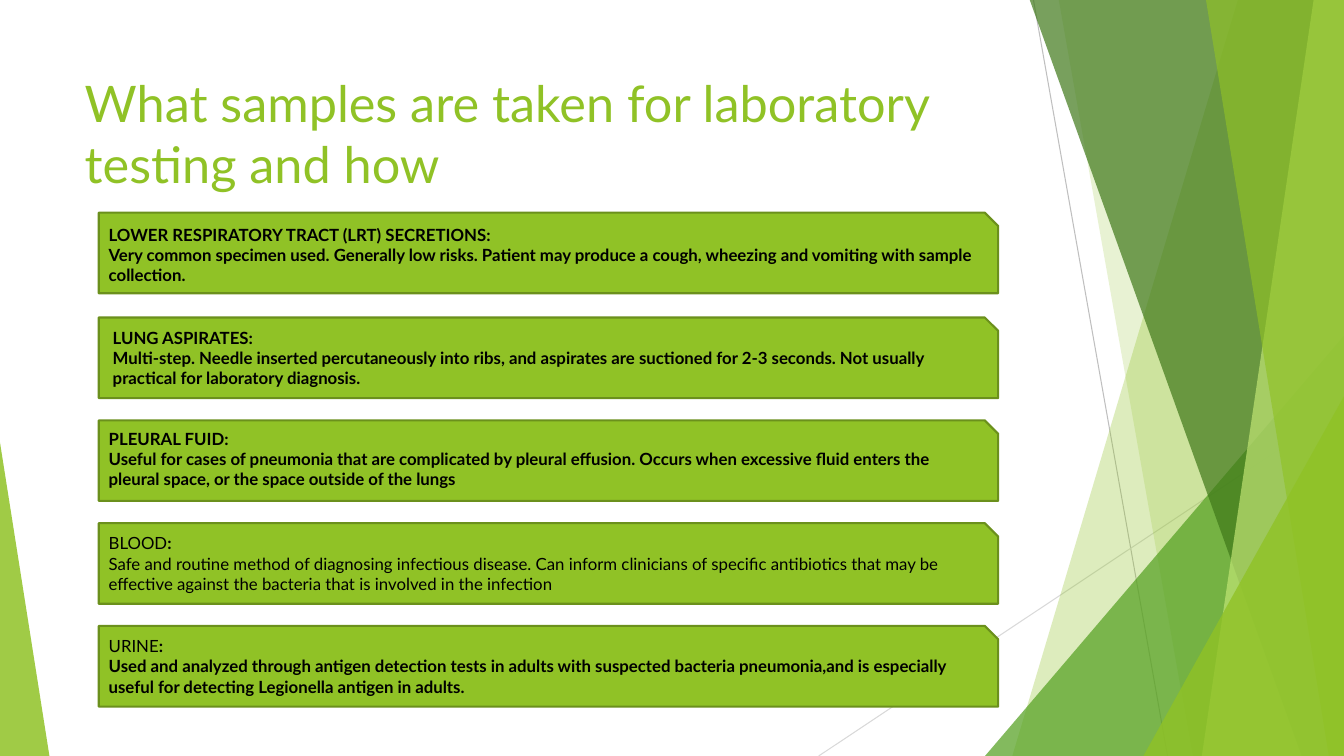
"""Build a slide listing the samples taken for laboratory testing."""
from lxml import etree
from pptx import Presentation
from pptx import util as u
from pptx.dml.color import RGBColor
from pptx.enum import shapes, text
from pptx.oxml.ns import qn

PX = 9144
WIDTH, HEIGHT = 1333, 750
FONT = "Lato"
COLORS = {
    "lime": "90C226", "pale": "C0E474", "green": "54A021", "forest": "3F7819",
    "edge": "6B901C", "black": "000000", "silver": "BFBFBF", "mist": "D9D9D9",
}
RAYS = [
    ((1025, 0), (1158, 750), "silver"),
    ((1333, 403), (812, 750), "mist"),
]
BACK_BANDS = [(1228, 1004, "lime", 30), (1050, 1183, "lime", 20)]
FRONT_BANDS = [
    (1021, 1291, "forest", 70),
    (1303, 1192, "pale", 70),
    (1196, 1318, "lime", 65),
]
GREEN_CORNER = ((977, 333, 356, 417), 1, "green", 72)
LIME_CORNERS = [
    ((1134, 393, 199, 357), 1, "lime", 80),
    ((0, 439, 49, 311), 0, "lime", 85),
]
SAMPLES = [
    (211, 98, 218, "LOWER RESPIRATORY TRACT (LRT) SECRETIONS", True,
     "Very common specimen used. Generally low risks. Patient may produce a cough, "
     "wheezing and vomiting with sample collection.", True),
    (315, 102, 320, "LUNG ASPIRATES", True,
     "Multi-step. Needle inserted percutaneously into ribs, and aspirates are suctioned "
     "for 2-3 seconds. Not usually practical for laboratory diagnosis.", True),
    (417, 98, 420, "PLEURAL FUID", True,
     "Useful for cases of pneumonia that are complicated by pleural effusion. Occurs when "
     "excessive fluid enters the pleural space, or the space outside of the lungs", True),
    (519, 98, 524, "BLOOD", False,
     "Safe and routine method of diagnosing infectious disease. Can inform clinicians of "
     "specific antibiotics that may be effective against the bacteria that is involved in "
     "the infection", False),
    (621, 98, 626, "URINE", False,
     "Used and analyzed through antigen detection tests in adults with suspected bacteria "
     "pneumonia,and is especially useful for detecting Legionella antigen in adults.", True),
]


def px(*lengths):
    return [u.Emu(length * PX) for length in lengths]


def rgb(name):
    return RGBColor.from_string(COLORS[name])


def set_all(target, values):
    for key, value in values.items():
        setattr(target, key, value)


def paint(part, color, opacity=100):
    part.shadow.inherit = False
    part.line.fill.background()
    part.fill.solid()
    part.fill.fore_color.rgb = rgb(color)
    if opacity < 100:
        tint = part.fill._xPr.find(qn("a:solidFill"))[0]
        etree.SubElement(tint, qn("a:alpha"), val=str(opacity * 1000))


def add_ray(slide, start, end, color):
    ray = slide.shapes.add_connector(shapes.MSO_CONNECTOR.STRAIGHT, *px(*start, *end))
    ray.line.color.rgb = rgb(color)
    ray.line.width = u.Pt(0.75)
    etree.SubElement(ray._element.spPr, qn("a:effectLst"))


def add_band(slide, top_x, bottom_x, color, opacity):
    outline = slide.shapes.build_freeform(top_x, -1, scale=PX)
    outline.add_line_segments([(WIDTH, -1), (WIDTH, HEIGHT), (bottom_x, HEIGHT)])
    paint(outline.convert_to_shape(), color, opacity)


def add_corner(slide, box, apex, color, opacity):
    corner = slide.shapes.add_shape(shapes.MSO_SHAPE.ISOSCELES_TRIANGLE, *px(*box))
    corner.adjustments[0] = apex
    paint(corner, color, opacity)


def add_card(slide, top):
    card = slide.shapes.add_shape(
        shapes.MSO_SHAPE.SNIP_1_RECTANGLE, *px(98, top, 892, 80))
    paint(card, "lime")
    card.line.color.rgb = rgb("edge")
    card.line.width = u.Pt(1.5)


def add_run(paragraph, words, size, color, bold=False):
    run = paragraph.add_run()
    run.text = words
    set_all(run.font, {"name": FONT, "size": u.Pt(size), "bold": bold})
    run.font.color.rgb = rgb(color)


def add_description(slide, left, top, sample, sample_bold, detail, detail_bold):
    frame = slide.shapes.add_textbox(*px(left, top, 884, 71)).text_frame
    set_all(frame, {"word_wrap": True, "auto_size": text.MSO_AUTO_SIZE.SHAPE_TO_FIT_TEXT})
    heading = frame.paragraphs[0]
    add_run(heading, sample, 12, "black", sample_bold)
    add_run(heading, ":", 12, "black", True)
    add_run(frame.add_paragraph(), detail, 12, "black", detail_bold)


def add_title(slide, words):
    title = slide.shapes.title
    set_all(title, dict(zip(("left", "top", "width", "height"), px(74, 67, 940, 144))))
    set_all(title.text_frame, {
        "word_wrap": True,
        "auto_size": text.MSO_AUTO_SIZE.NONE,
        "vertical_anchor": text.MSO_ANCHOR.TOP,
    })
    heading = title.text_frame.paragraphs[0]
    heading.alignment = text.PP_ALIGN.LEFT
    add_run(heading, words, 36, "lime")


def add_backdrop(slide):
    for ray in RAYS:
        add_ray(slide, *ray)
    for band in BACK_BANDS:
        add_band(slide, *band)
    add_corner(slide, *GREEN_CORNER)
    for band in FRONT_BANDS:
        add_band(slide, *band)
    for corner in LIME_CORNERS:
        add_corner(slide, *corner)


def main():
    deck = Presentation()
    deck.slide_width, deck.slide_height = px(WIDTH, HEIGHT)
    slide = deck.slides.add_slide(deck.slide_layouts[5])
    add_backdrop(slide)
    add_title(slide, "What samples are taken for laboratory testing and how")
    for card_top, *description in SAMPLES:
        add_card(slide, card_top)
        add_description(slide, *description)
    deck.save("out.pptx")


if __name__ == "__main__":
    main()
